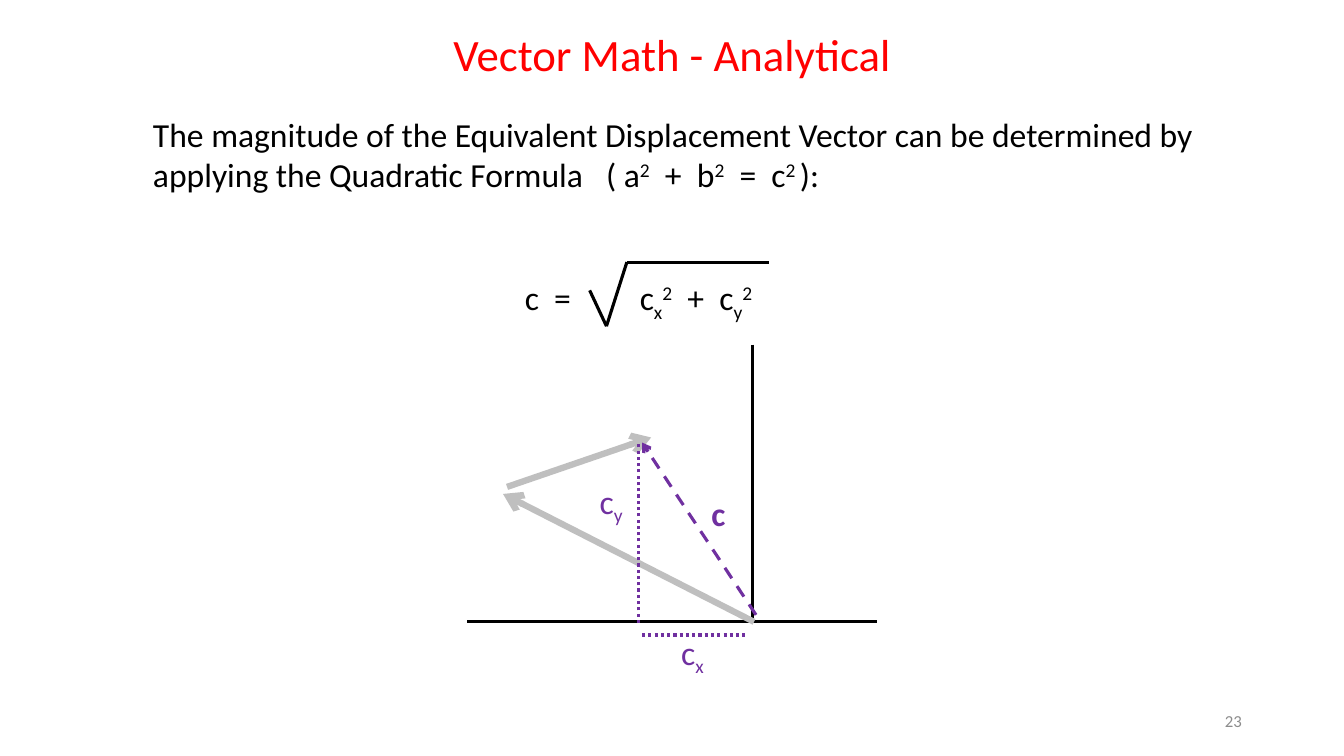
"""Builds the slide on the magnitude of an equivalent displacement vector."""
from lxml.etree import SubElement
from pptx import Presentation
from pptx.dml.color import RGBColor
from pptx.enum.dml import MSO_LINE_DASH_STYLE as Dash
from pptx.enum.shapes import MSO_CONNECTOR as Connector
from pptx.enum.text import MSO_ANCHOR as Anchor, MSO_AUTO_SIZE as AutoSize, PP_ALIGN as Align
from pptx.oxml.ns import qn
from pptx.util import Pt

COLORS = {"title": "FF0000", "ink": "000000", "sum": "7030A0",
          "addend": "BFBFBF", "number": "8C8C8C"}
SUP, SUB = 30, -25
SQUARED = ("2", SUP)
GAP = (" ", 0, 5.4)
WIDE_GAP = (" ", 0, 10.8)
PLUS = [GAP, ("+",), GAP]
EQUALS = [GAP, ("=",), GAP]


class VectorSlide:
    """Holds the style and the current slide."""

    def __init__(self, deck):
        """Add a slide with only a title placeholder."""
        self.font = "Calibri"
        self.slide = deck.slides.add_slide(deck.slide_layouts[5])

    def color(self, key):
        """Return the named colour."""
        return RGBColor.from_string(COLORS[key])

    def style(self, run, size, color, bold=False):
        """Format one run."""
        run.font.name = self.font
        run.font.size = Pt(size)
        run.font.bold = bold
        run.font.color.rgb = self.color(color)

    def place(self, shape, box):
        """Move and size a shape."""
        shape.left, shape.top, shape.width, shape.height = map(Pt, box)

    def title(self, text, box):
        """Fill the title placeholder."""
        heading = self.slide.shapes.title
        self.place(heading, box)
        frame = heading.text_frame
        frame.text = text
        frame.auto_size = AutoSize.NONE
        frame.vertical_anchor = Anchor.TOP
        frame.paragraphs[0].alignment = Align.CENTER
        self.style(frame.paragraphs[0].runs[0], 32, "title")

    def text(self, box, parts, size=24, color="ink", bold=False,
             align=Align.LEFT, anchor=Anchor.TOP):
        """Add text made of (text, baseline, letter spacing) parts."""
        frame = self.slide.shapes.add_textbox(*map(Pt, box)).text_frame
        frame.word_wrap = True
        frame.vertical_anchor = anchor
        paragraph = frame.paragraphs[0]
        paragraph.alignment = align
        for wording, baseline, spacing in ((*part, 0, 0)[:3] for part in parts):
            run = paragraph.add_run()
            run.text = wording
            self.style(run, size, color, bold)
            properties = run.font._element
            if baseline:
                properties.set("baseline", str(baseline * 1000))
            if spacing:
                properties.set("spc", str(round(spacing * 100)))

    def line(self, start, end, color="ink", width=2.25, dash=None, arrow=False):
        """Add a straight line, with an optional arrowhead at its end."""
        connector = self.slide.shapes.add_connector(
            Connector.STRAIGHT, *map(Pt, (*start, *end)))
        connector.line.color.rgb = self.color(color)
        connector.line.width = Pt(width)
        if dash:
            connector.line.dash_style = dash
        properties = connector._element.spPr
        if arrow:
            SubElement(properties.find(qn("a:ln")), qn("a:tailEnd"), type="arrow")
        SubElement(properties, qn("a:effectLst"))


def main():
    """Build and save the slide."""
    deck = Presentation()
    deck.slide_width, deck.slide_height = Pt(960), Pt(540)
    page = VectorSlide(deck)

    page.title("Vector Math - Analytical", (268.5, 15.8, 423.4, 46))
    page.text((102.2, 77.8, 816.5, 66), [
        ("The magnitude of the Equivalent Displacement Vector can be determined "
         "by applying the Quadratic Formula",), WIDE_GAP,
        ("( a",), SQUARED, *PLUS, ("b",), SQUARED, *EQUALS,
        ("c",), ("2 ", SUP), ("):",)])

    page.text((367.8, 194.5, 60, 36), [("c",), GAP, ("=",)])
    page.text((449.9, 194.5, 110, 36), [
        ("c",), ("x", SUB), SQUARED, *PLUS, ("c",), ("y", SUB), SQUARED])
    radical = [(421.2, 207.4), (433.2, 233), (447.8, 187.2), (549.4, 187.2)]
    for start, end in zip(radical, radical[1:]):
        page.line(start, end)

    page.text((678.2, 500.4, 216, 28.8), [("23",)], 12, "number",
              align=Align.RIGHT, anchor=Anchor.MIDDLE)

    axis_x, axis_y = 537.8, 444.2
    page.line((axis_x, 246.2), (axis_x, axis_y))
    page.line((626.4, axis_y), (333.4, axis_y))
    page.line((538.6, axis_y), (359.3, 352.8), "addend", 4.5, arrow=True)
    page.line((362.2, 347.8), (465.1, 312.5), "addend", 4.5, arrow=True)
    page.line((540, 439.2), (458.6, 316.1), "sum", dash=Dash.DASH, arrow=True)
    page.text((501.1, 348.5, 38.2, 36), [("c",)], color="sum", bold=True)

    components = [("y", (421.2, 339.8), (455.8, 445), (455.8, 317.5)),
                  ("x", (479.5, 447.8), (458.6, 453.6), (533.5, 453.6))]
    for axis, corner, start, end in components:
        page.line(start, end, "sum", dash=Dash.ROUND_DOT)
        page.text((*corner, 51.8, 36), [("c",), (axis, SUB)], color="sum")

    deck.save("out.pptx")


if __name__ == "__main__":
    main()
